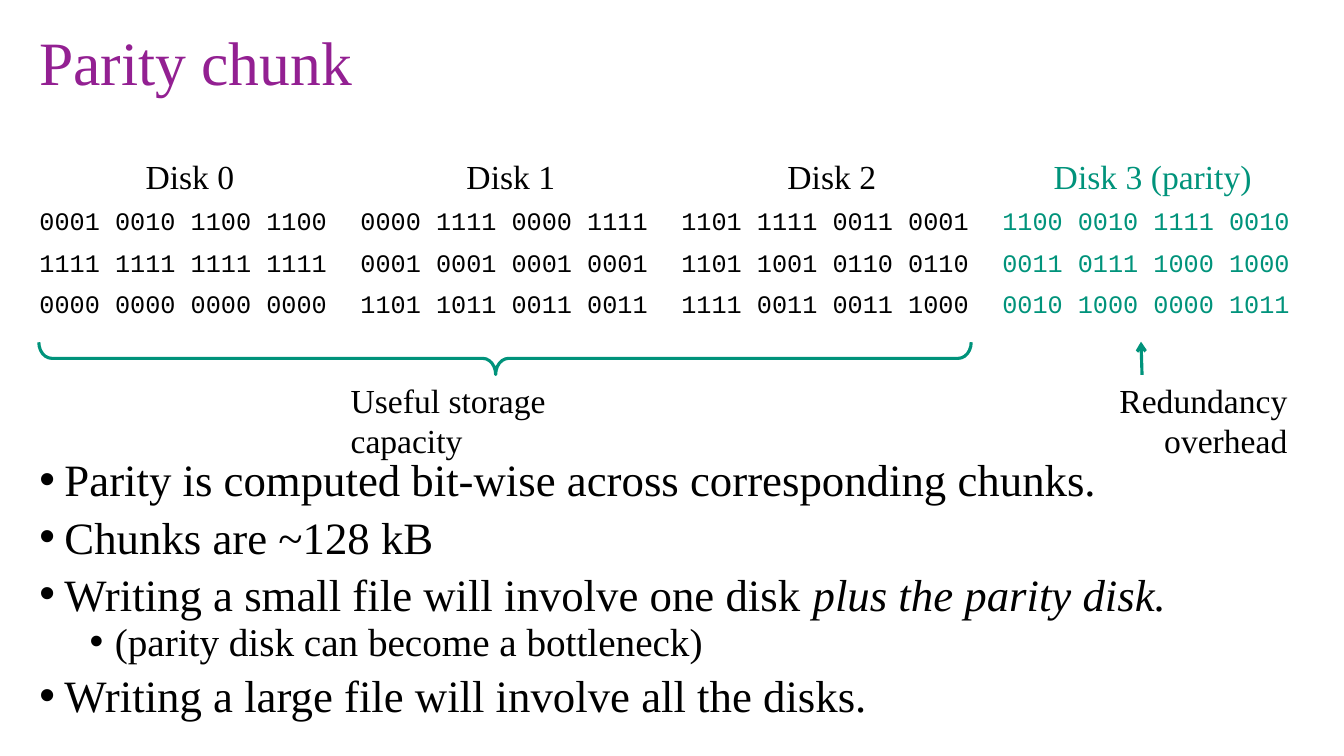
from lxml.etree import SubElement
from pptx import Presentation
from pptx.dml.color import RGBColor
from pptx.enum.shapes import MSO_CONNECTOR as Connector, MSO_SHAPE as Shape
from pptx.enum.text import MSO_ANCHOR as Anchor, MSO_AUTO_SIZE as AutoSize, PP_ALIGN as Align
from pptx.oxml.ns import qn
from pptx.util import Pt

COLORS = {"title": "932092", "text": "000000", "parity": "00937B"}
SERIF, MONO = "Times New Roman", "Courier New"

TITLE = "Parity chunk"
DISKS = [
    ("Disk 0", "0001 0010 1100 1100", "1111 1111 1111 1111", "0000 0000 0000 0000"),
    ("Disk 1", "0000 1111 0000 1111", "0001 0001 0001 0001", "1101 1011 0011 0011"),
    ("Disk 2", "1101 1111 0011 0001", "1101 1001 0110 0110", "1111 0011 0011 1000"),
    ("Disk 3 (parity)", "1100 0010 1111 0010", "0011 0111 1000 1000", "0010 1000 0000 1011"),
]
LABELS = [
    ("Useful storage capacity", 243.36, 234, Align.LEFT),
    ("Redundancy overhead", 703.44, 223.2, Align.RIGHT),
]
POINTS = [
    (0, "Parity is computed bit-wise across corresponding chunks.", ""),
    (0, "Chunks are ~128 kB", ""),
    (0, "Writing a small file will involve one disk ", "plus the parity disk."),
    (1, "(parity disk can become a bottleneck)", ""),
    (0, "Writing a large file will involve all the disks.", ""),
]
POINT_STYLES = [(32, 10, 18), (28, 5, 54)]

SLIDE_WIDTH, SLIDE_HEIGHT = 960, 540
MARGIN, CONTENT_WIDTH = 21, 917
TABLE_TOP, HEADER_HEIGHT, ROW_HEIGHT = 110.16, 34.8, 29.7
LABEL_TOP, LABEL_HEIGHT = 267.84, 36
HANGING = 18


def rgb(name):
    return RGBColor.from_string(COLORS[name])


def style(paragraph, size, color="text", font=SERIF):
    for run in paragraph.runs:
        run.font.size = Pt(size)
        run.font.name = font
        run.font.color.rgb = rgb(color)


def add_text_frame(slide, left, top, width, height):
    frame = slide.shapes.add_textbox(Pt(left), Pt(top), Pt(width), Pt(height)).text_frame
    frame.word_wrap = True
    return frame


def add_title(slide):
    frame = add_text_frame(slide, MARGIN, 12.24, CONTENT_WIDTH, 69.84)
    frame.vertical_anchor = Anchor.MIDDLE
    frame.text = TITLE
    frame.paragraphs[0].line_spacing = 0.9
    style(frame.paragraphs[0], 44, "title")


def add_points(slide):
    frame = add_text_frame(slide, MARGIN, 326.88, CONTENT_WIDTH, 196.56)
    for index, (level, plain, emphasis) in enumerate(POINTS):
        point = frame.add_paragraph() if index else frame.paragraphs[0]
        size, space, indent = POINT_STYLES[level]
        point.text = plain
        if emphasis:
            run = point.add_run()
            run.text = emphasis
            run.font.italic = True
        point.level = level
        point.line_spacing = 0.8
        point.space_before = Pt(space)
        style(point, size)
        properties = point._p.get_or_add_pPr()
        properties.set("marL", str(Pt(indent)))
        properties.set("indent", str(-Pt(HANGING)))
        SubElement(properties, qn("a:buFont"), typeface="Arial")
        SubElement(properties, qn("a:buChar"), char="•")


def add_disks(slide):
    row_count = len(DISKS[0])
    height = HEADER_HEIGHT + ROW_HEIGHT * (row_count - 1)
    table = slide.shapes.add_table(
        row_count, len(DISKS), Pt(MARGIN), Pt(TABLE_TOP), Pt(CONTENT_WIDTH), Pt(height)
    ).table
    table.first_row = table.horz_banding = False
    for row_index, row in enumerate(table.rows):
        row.height = Pt(ROW_HEIGHT if row_index else HEADER_HEIGHT)
    for column, disk in enumerate(DISKS):
        color = "parity" if column == len(DISKS) - 1 else "text"
        for row_index, chunk in enumerate(disk):
            cell = table.cell(row_index, column)
            cell.fill.background()
            cell.text_frame.text = chunk
            paragraph = cell.text_frame.paragraphs[0]
            if row_index:
                style(paragraph, 18, color, MONO)
            else:
                paragraph.alignment = Align.CENTER
                style(paragraph, 24, color)


def add_brace(slide):
    brace = slide.shapes.add_shape(Shape.LEFT_BRACE, Pt(349.2), Pt(-77.04), Pt(23.04), Pt(666))
    brace.rotation = 270
    brace.adjustments[0], brace.adjustments[1] = 0.4, 0.49
    brace.shadow.inherit = False
    brace.fill.background()
    brace.line.color.rgb = rgb("parity")
    brace.line.width = Pt(2.25)


def add_arrow(slide):
    arrow = slide.shapes.add_connector(
        Connector.STRAIGHT, Pt(815.76), Pt(LABEL_TOP), Pt(815.04), Pt(244.08)
    )
    arrow.line.color.rgb = rgb("parity")
    arrow.line.width = Pt(2.25)
    properties = arrow.element.spPr
    SubElement(properties.find(qn("a:ln")), qn("a:tailEnd"), type="arrow")
    SubElement(properties, qn("a:effectLst"))


def add_labels(slide):
    for label, left, width, alignment in LABELS:
        frame = add_text_frame(slide, left, LABEL_TOP, width, LABEL_HEIGHT)
        frame.auto_size = AutoSize.SHAPE_TO_FIT_TEXT
        frame.text = label
        frame.paragraphs[0].alignment = alignment
        style(frame.paragraphs[0], 24)


def main():
    """Build the slide about parity chunks."""
    deck = Presentation()
    deck.slide_width, deck.slide_height = Pt(SLIDE_WIDTH), Pt(SLIDE_HEIGHT)
    slide = deck.slides.add_slide(deck.slide_layouts[6])
    for add_part in (add_title, add_points, add_disks, add_brace, add_arrow, add_labels):
        add_part(slide)
    deck.save("out.pptx")


if __name__ == "__main__":
    main()
